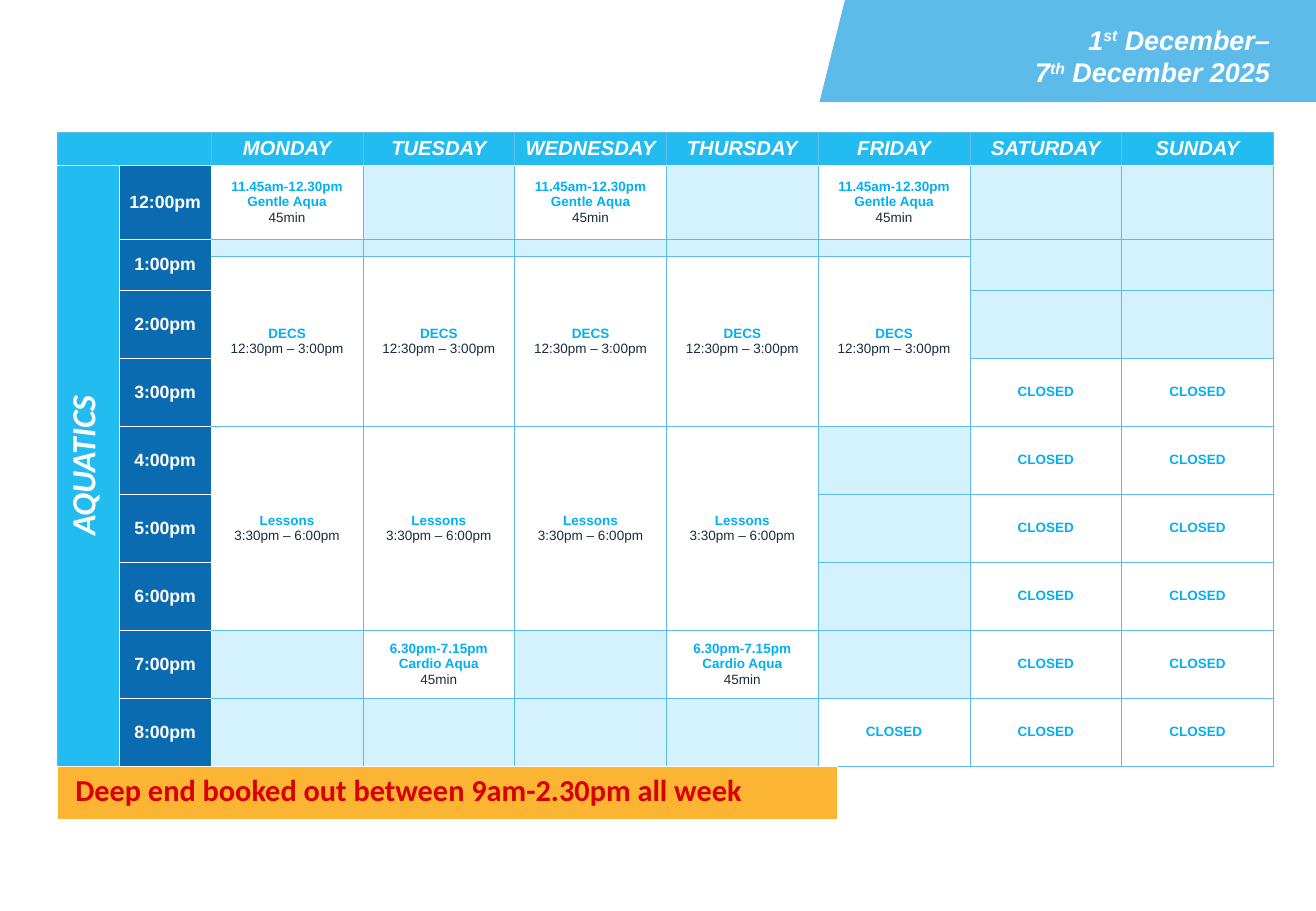
from lxml.etree import SubElement
from pptx import Presentation
from pptx.dml.color import RGBColor
from pptx.enum.shapes import MSO_SHAPE as SHAPE
from pptx.enum.text import MSO_ANCHOR as ANCHOR, PP_ALIGN as ALIGN
from pptx.oxml.ns import qn
from pptx.util import Inches, Pt

COLOURS = {
    "white": "FFFFFF", "banner": "5DBBEA", "header": "22BCF0", "time": "0B6BB0",
    "free": "D4F2FD", "event": "00B0F0", "detail": "1A2C3B",
    "notice": "FCB533", "warning": "D80000",
}
DAYS = ["MONDAY", "TUESDAY", "WEDNESDAY", "THURSDAY", "FRIDAY", "SATURDAY", "SUNDAY"]
TIME_ROWS = {"12:00pm": 1, "1:00pm": 2, "2:00pm": 4, "3:00pm": 5, "4:00pm": 6,
             "5:00pm": 7, "6:00pm": 8, "7:00pm": 9, "8:00pm": 10}
COLUMN_WIDTHS = [0.51, 0.76] + [1.25] * len(DAYS)
ROW_HEIGHTS = [0.27, 0.61, 0.14, 0.28] + [0.56] * 7
MON, TUE, WED, THU, FRI, SAT, SUN = range(2, 9)

# Each entry: first row, rows spanned, days, bold lines, plain lines
SESSIONS = [
    (1, 1, (MON, WED, FRI), ["11.45am-12.30pm", "Gentle Aqua"], ["45min"]),
    (2, 2, (SAT, SUN), [], []),
    (3, 3, (MON, TUE, WED, THU, FRI), ["DECS"], ["12:30pm – 3:00pm"]),
    (6, 3, (MON, TUE, WED, THU), ["Lessons"], ["3:30pm – 6:00pm"]),
    (9, 1, (TUE, THU), ["6.30pm-7.15pm", "Cardio Aqua"], ["45min"]),
    *[(row, 1, (SAT, SUN), ["CLOSED"], []) for row in range(5, 10)],
    (10, 1, (FRI, SAT, SUN), ["CLOSED"], []),
]


def rgb(name):
    return RGBColor.from_string(COLOURS[name])


def add_run(paragraph, text, size, colour, bold=True, italic=False, face="Arial"):
    run = paragraph.add_run()
    run.text = text
    font = run.font
    font.name, font.size, font.bold, font.italic = face, Pt(size), bold, italic
    font.color.rgb = rgb(colour)
    return run


def add_banner_part(slide, kind, left, width):
    part = slide.shapes.add_shape(kind, Inches(left), 0, Inches(width), Inches(0.84))
    part.shadow.inherit = False
    part.fill.solid()
    part.fill.fore_color.rgb = rgb("banner")
    part.line.fill.background()


def add_dates(slide):
    box = slide.shapes.add_textbox(Inches(6.59), Inches(0.19), Inches(3.87), Inches(0.54))
    frame = box.text_frame
    frame.word_wrap = True
    frame.margin_left = frame.margin_right = frame.margin_top = frame.margin_bottom = 0
    lines = [("1", "st", " December–"), ("7", "th", " December 2025")]
    for index, (day, ordinal, month) in enumerate(lines):
        line = frame.add_paragraph() if index else frame.paragraphs[0]
        line.alignment = ALIGN.RIGHT
        add_run(line, day, 16, "white", italic=True)
        raised = add_run(line, ordinal, 16, "white", italic=True)
        raised.font._element.set("baseline", "30000")
        add_run(line, month, 16, "white", italic=True)


def add_grid(slide, left, top, widths, heights):
    """Add a table without banding, sized by its columns and rows."""
    frame = slide.shapes.add_table(len(heights), len(widths), Inches(left), Inches(top),
                                   Inches(sum(widths)), Inches(sum(heights)))
    table = frame.table
    table.first_row = table.horz_banding = False
    for column, width in zip(table.columns, widths):
        column.width = Inches(width)
    for row, height in zip(table.rows, heights):
        row.height = Inches(height)
    return table


def set_borders(cell, edges):
    """Draw (colour, points) edges in the order left, right, top, bottom."""
    properties = cell._tc.get_or_add_tcPr()
    for side, (colour, points) in zip("LRTB", edges):
        line = SubElement(properties, qn(f"a:ln{side}"), w=str(Pt(points)))
        fill = SubElement(line, qn("a:solidFill"))
        SubElement(fill, qn("a:srgbClr"), val=COLOURS[colour])


def fill_cell(cell, colour):
    cell.fill.solid()
    cell.fill.fore_color.rgb = rgb(colour)


def write_cell(cell, lines, margins=(0.05, 0), **style):
    """Write centred lines, each a (text, size, colour, bold) tuple."""
    cell.vertical_anchor = ANCHOR.MIDDLE
    cell.margin_left = cell.margin_right = Inches(margins[0])
    cell.margin_top = cell.margin_bottom = Inches(margins[1])
    for index, (text, size, colour, bold) in enumerate(lines):
        frame = cell.text_frame
        paragraph = frame.add_paragraph() if index else frame.paragraphs[0]
        paragraph.alignment = ALIGN.CENTER
        add_run(paragraph, text, size, colour, bold, **style)


def shrink_empty(cell):
    """Keep an empty cell from stretching its row."""
    write_cell(cell, [])
    SubElement(cell.text_frame.paragraphs[0]._p, qn("a:endParaRPr"), sz="600")


def outline_timetable(table):
    last_row = len(ROW_HEIGHTS)

    def upright(row, x):
        return ("white" if row and x in (1, 2) else "banner", 0.5)

    def level(column, y):
        inside_times = column == 1 and 0 < y < last_row
        return ("white" if y == 1 or inside_times else "banner", 0.5)

    for row in range(last_row):
        for column in range(len(COLUMN_WIDTHS)):
            cell = table.cell(row, column)
            if not cell.is_spanned:
                right = column + (cell.span_width if cell.is_merge_origin else 1)
                bottom = row + (cell.span_height if cell.is_merge_origin else 1)
                set_borders(cell, [upright(row, column), upright(row, right),
                                   level(column, row), level(column, bottom)])
            is_header = row == 0 or column == 0
            fill_cell(cell, "header" if is_header else "time" if column == 1
                      else "white" if cell.text_frame.text else "free")
            if not cell.text_frame.text:
                shrink_empty(cell)


def add_timetable(slide):
    table = add_grid(slide, 0.47, 1.09, COLUMN_WIDTHS, ROW_HEIGHTS)
    table.cell(0, 0).merge(table.cell(0, 1))
    table.cell(1, 0).merge(table.cell(10, 0))
    table.cell(2, 1).merge(table.cell(3, 1))

    for column, day in enumerate(DAYS, start=MON):
        write_cell(table.cell(0, column), [(day, 12, "white", True)], (0.01, 0.02), italic=True)
    for time, row in TIME_ROWS.items():
        write_cell(table.cell(row, 1), [(time, 10.5, "white", True)])
    aquatics = table.cell(1, 0)
    write_cell(aquatics, [("AQUATICS", 20, "white", True)], (0.04, 0.05),
               italic=True, face="Calibri")
    aquatics._tc.get_or_add_tcPr().set("vert", "vert270")

    for row, span, days, titles, details in SESSIONS:
        lines = [(text, 8, "event", True) for text in titles]
        lines += [(text, 8, "detail", False) for text in details]
        for column in days:
            if span > 1:
                table.cell(row, column).merge(table.cell(row + span - 1, column))
            write_cell(table.cell(row, column), lines)
    outline_timetable(table)


def add_notice(slide):
    notice = add_grid(slide, 0.47, 6.31, [6.43], [0.45]).cell(0, 0)
    set_borders(notice, [("white", points) for points in (1, 1, 1, 3)])
    fill_cell(notice, "notice")
    notice.margin_left = Inches(0.15)
    add_run(notice.text_frame.paragraphs[0], "Deep end booked out between 9am-2.30pm all week",
            18, "warning", face="Calibri")


def main():
    deck = Presentation()
    deck.slide_width, deck.slide_height = Inches(10.84), Inches(7.5)
    slide = deck.slides.add_slide(deck.slide_layouts[6])
    add_banner_part(slide, SHAPE.PARALLELOGRAM, 6.75, 2.52)
    add_banner_part(slide, SHAPE.RECTANGLE, 7.28, 3.56)
    add_timetable(slide)
    add_dates(slide)
    add_notice(slide)
    deck.save("out.pptx")


if __name__ == "__main__":
    main()
